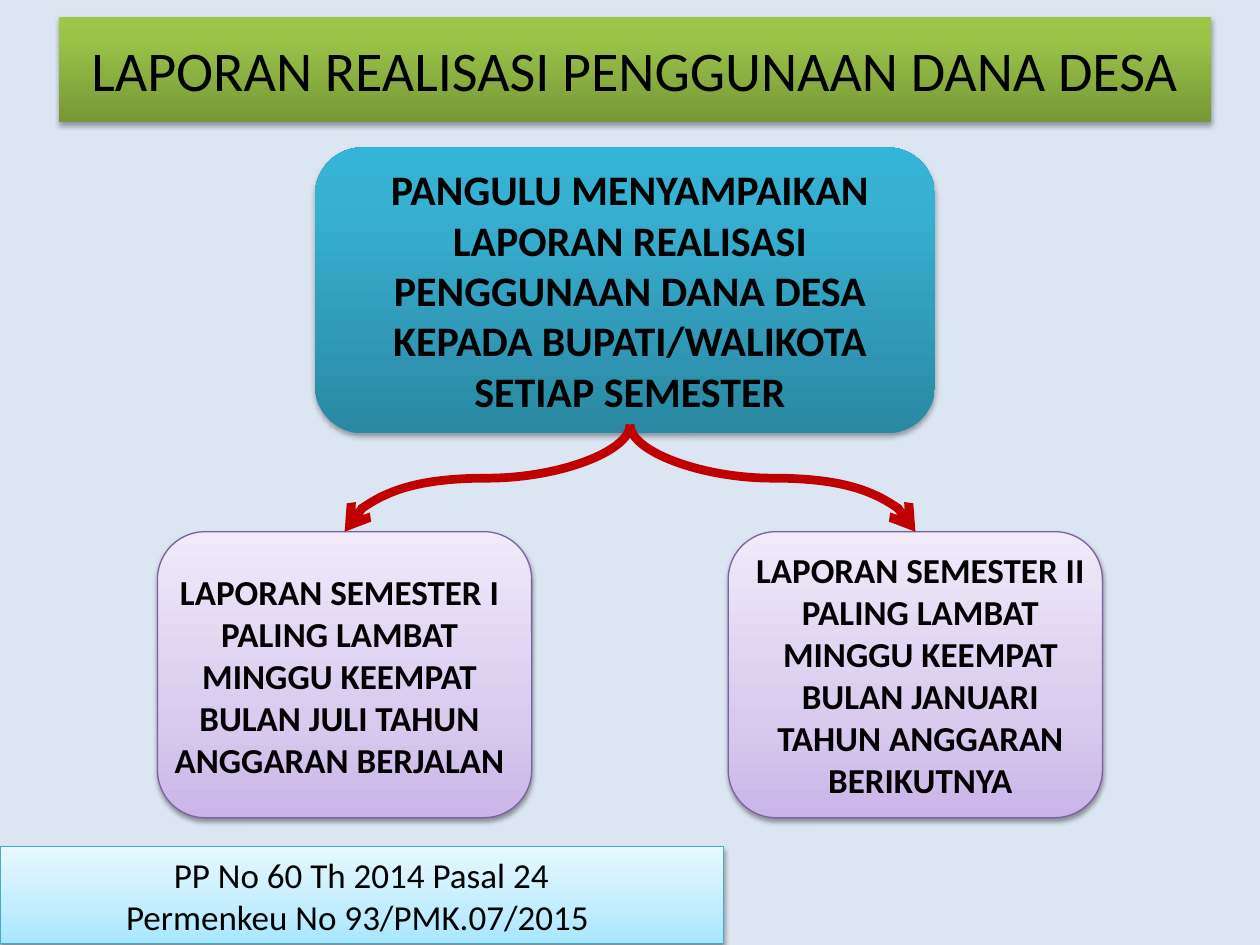
"""Builds the slide on the reporting schedule for village fund spending."""
from copy import deepcopy

from lxml import etree
from pptx import Presentation
from pptx.dml.color import RGBColor
from pptx.enum.shapes import MSO_CONNECTOR, MSO_SHAPE
from pptx.enum.text import MSO_ANCHOR, MSO_AUTO_SIZE, PP_ALIGN
from pptx.oxml.ns import qn
from pptx.util import Pt

RECT, ROUNDED = MSO_SHAPE.RECTANGLE, MSO_SHAPE.ROUNDED_RECTANGLE
CURVE = MSO_CONNECTOR.CURVE
CENTER, MIDDLE, TOP = PP_ALIGN.CENTER, MSO_ANCHOR.MIDDLE, MSO_ANCHOR.TOP
GROW = MSO_AUTO_SIZE.SHAPE_TO_FIT_TEXT

FONT, INK, BACKGROUND, ARROW = "Calibri", "000000", "DCE6F2", "C00000"
GREEN = [(0, "779737"), (80, "9BC348"), (100, "9DC746")]
TEAL = [(0, "2A88A2"), (80, "37B1D2"), (100, "34B4D6")]
PURPLE = [(0, "C9B5E8"), (35, "D8CBEE"), (100, "F0EAF9")]
AQUA = [(0, "A7E6FF"), (35, "C1EDFF"), (100, "E7F8FF")]

TITLE = "LAPORAN REALISASI PENGGUNAAN DANA DESA"
TITLE_AT = (33.84, 16.56, 658.08, 46.08)
DUTY = ("PANGULU MENYAMPAIKAN LAPORAN REALISASI PENGGUNAAN DANA DESA "
        "KEPADA BUPATI/WALIKOTA SETIAP SEMESTER")
DUTY_AT = (180, 84.24, 354.24, 163.44)
DUTY_TEXT_AT = (185.76, 90, 348.48, 152.64)
SEMESTERS = [
    ("LAPORAN SEMESTER I PALING LAMBAT MINGGU KEEMPAT BULAN JULI TAHUN "
     "ANGGARAN BERJALAN", 90, (90, 322.56, 208.08, 128.16)),
    ("LAPORAN SEMESTER II PALING LAMBAT MINGGU KEEMPAT BULAN JANUARI TAHUN "
     "ANGGARAN BERIKUTNYA", 416.16, (421.92, 309.6, 208.08, 152.64)),
]
CARD_TOP, CARD_WIDTH, CARD_HEIGHT = 303.84, 213.84, 163.44
FORK = (360, 242.64)
RULES = ["PP No 60 Th 2014 Pasal 24", "Permenkeu No 93/PMK.07/2015 "]
RULES_AT = (0, 483.84, 413.28, 55.44)


def color(value):
    return RGBColor.from_string(value)


def points(values):
    return [Pt(value) for value in values]


def style(shape, stops, outline=None):
    shape.fill.gradient()
    shape.fill.gradient_angle = 90
    last = list(shape._element.iter(qn("a:gs")))[-1]
    last.addnext(deepcopy(last))
    for stop, (position, value) in zip(shape.fill.gradient_stops, stops):
        stop.color.rgb = color(value)
        stop.position = position / 100
    if outline:
        shape.line.color.rgb = color(outline)
        shape.line.width = Pt(0.75)
    else:
        shape.line.fill.background()
    shape.shadow.inherit = False
    effects = shape._element.spPr.find(qn("a:effectLst"))
    shadow = etree.SubElement(
        effects, qn("a:outerShdw"), blurRad=str(Pt(3.1)),
        dist=str(Pt(1.6 if outline else 1.8)), dir="5400000", rotWithShape="0")
    tone = etree.SubElement(shadow, qn("a:srgbClr"), val=INK)
    etree.SubElement(tone, qn("a:alpha"), val="38000" if outline else "35000")


def write(shape, lines, size, bold=False, anchor=MIDDLE):
    frame = shape.text_frame
    frame.word_wrap = True
    frame.auto_size = GROW
    frame.vertical_anchor = anchor
    for index, line in enumerate(lines):
        para = frame.add_paragraph() if index else frame.paragraphs[0]
        para.alignment = CENTER
        span = para.add_run()
        span.text = line
        span.font.name, span.font.size, span.font.bold = FONT, Pt(size), bold
        span.font.color.rgb = color(INK)


def add_panel(page, kind, at, stops, outline=None):
    panel = page.shapes.add_shape(kind, *points(at))
    style(panel, stops, outline)
    return panel


def add_label(page, at, text, size):
    label = page.shapes.add_textbox(*points(at))
    write(label, [text], size, bold=True, anchor=TOP)


def add_branch(page, start, end):
    """Add a curve that leaves start downwards, as a sideways curve turned upright."""
    (x1, y1), (x2, y2) = start, end
    middle_x, middle_y = (x1 + x2) / 2, (y1 + y2) / 2
    half_width, half_height = (y2 - y1) / 2, abs(x2 - x1) / 2
    side = 1 if x2 > x1 else -1
    branch = page.shapes.add_connector(CURVE, *points([
        middle_x + side * half_width, middle_y - half_height,
        middle_x - side * half_width, middle_y + half_height]))
    properties = branch._element.spPr
    properties.find(qn("a:xfrm")).set("rot", "16200000" if side > 0 else "5400000")
    branch.line.color.rgb = color(ARROW)
    branch.line.width = Pt(5)
    etree.SubElement(properties.find(qn("a:ln")), qn("a:tailEnd"), type="arrow")
    etree.SubElement(properties, qn("a:effectLst"))


def main():
    deck = Presentation()
    deck.slide_width, deck.slide_height = Pt(720), Pt(540)
    page = deck.slides.add_slide(deck.slide_layouts[5])
    page.background.fill.solid()
    page.background.fill.fore_color.rgb = color(BACKGROUND)

    title = page.shapes.title
    title.left, title.top, title.width, title.height = points(TITLE_AT)
    style(title, GREEN)
    write(title, [TITLE], 32)

    add_panel(page, ROUNDED, DUTY_AT, TEAL)
    add_label(page, DUTY_TEXT_AT, DUTY, 24)
    for text, left, text_at in SEMESTERS:
        card_at = (left, CARD_TOP, CARD_WIDTH, CARD_HEIGHT)
        add_panel(page, ROUNDED, card_at, PURPLE, "7D60A0")
        add_label(page, text_at, text, 20)
        add_branch(page, FORK, (left + CARD_WIDTH / 2, CARD_TOP))

    rules = add_panel(page, RECT, RULES_AT, AQUA, "46AAC5")
    write(rules, RULES, 20)
    deck.save("out.pptx")


if __name__ == "__main__":
    main()
